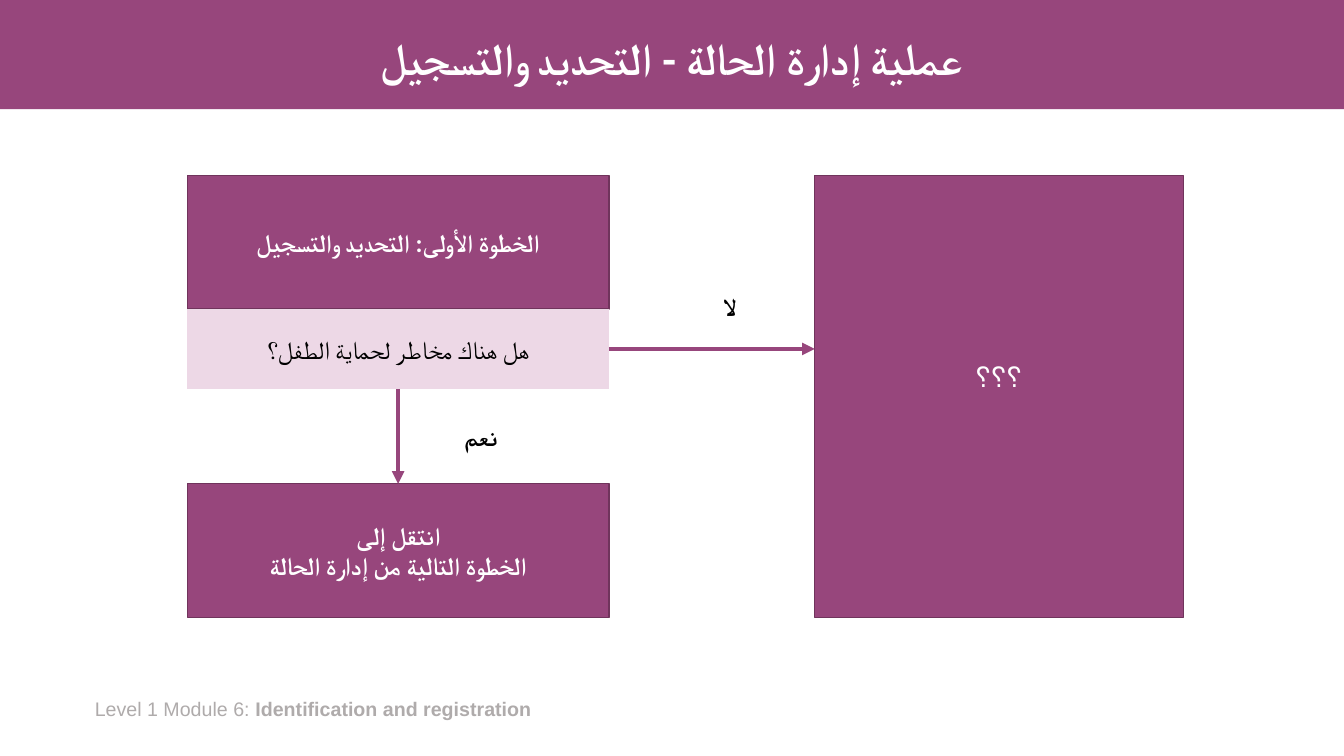
import pptx
import pptx.util
import pptx.dml.color
import pptx.enum.shapes
import pptx.enum.text
import pptx.oxml.ns
import lxml.etree
from dataclasses import dataclass

COLUMNS, ROWS = 160, 90
SHAPE = pptx.enum.shapes.MSO_SHAPE
ALIGN = pptx.enum.text.PP_ALIGN
ANCHOR = pptx.enum.text.MSO_ANCHOR


@dataclass(frozen=True)
class Theme:
    plum: str = "97467C"
    edge: str = "70345C"
    blush: str = "EDD8E6"
    white: str = "FFFFFF"
    black: str = "000000"
    grey: str = "AFABAB"
    heading: str = "Calibri"
    body: str = "Arial"
    title_size: int = 32
    large_size: int = 20
    text_size: int = 18
    footer_size: int = 14


THEME = Theme()
SLIDE_WIDTH = pptx.util.Emu(12192000)
SLIDE_HEIGHT = pptx.util.Inches(7.5)


def across(columns):
    return int(SLIDE_WIDTH * columns / COLUMNS)


def down(rows):
    return int(SLIDE_HEIGHT * rows / ROWS)


def area(left, top, width, height):
    return across(left), down(top), across(width), down(height)


def color(value):
    return pptx.dml.color.RGBColor.from_string(value)


def add_span(para, text, size, font, tint, bold=False):
    span = para.add_run()
    span.text = text
    span.font.size = pptx.util.Pt(size)
    span.font.name = font
    span.font.bold = bold
    span.font.color.rgb = color(tint)
    complex_script = lxml.etree.SubElement(
        span.font._element, pptx.oxml.ns.qn("a:cs"))
    complex_script.set("typeface", font)


def start_arabic(frame, align):
    para = frame.paragraphs[0]
    para.alignment = align
    para._p.get_or_add_pPr().set("rtl", "1")
    return para


def add_box(page, place, fill, edge=None, shape=SHAPE.FLOWCHART_PROCESS):
    box = page.shapes.add_shape(shape, *place)
    box.shadow.inherit = False
    box.fill.solid()
    box.fill.fore_color.rgb = color(fill)
    if edge:
        box.line.color.rgb = color(edge)
        box.line.width = pptx.util.Pt(1)
    else:
        box.line.fill.background()
    return box


def add_step(page, place, lines, fill=THEME.plum, edge=THEME.edge, tint=THEME.white,
             size=THEME.text_size, font=THEME.heading, bold=True):
    box = add_box(page, place, fill, edge)
    frame = box.text_frame
    frame.word_wrap = True
    frame.vertical_anchor = ANCHOR.MIDDLE
    para = start_arabic(frame, ALIGN.CENTER)
    for index, line in enumerate(lines):
        if index:
            para.add_line_break()
        add_span(para, line, size, font, tint, bold)
    return box


def add_text_frame(page, place):
    frame = page.shapes.add_textbox(*place).text_frame
    frame.word_wrap = True
    frame.auto_size = pptx.enum.text.MSO_AUTO_SIZE.SHAPE_TO_FIT_TEXT
    return frame


def add_label(page, place, text):
    para = start_arabic(add_text_frame(page, place), ALIGN.RIGHT)
    add_span(para, text, THEME.text_size, THEME.body, THEME.black, True)


def add_arrow(page, source, side, end):
    arrow = page.shapes.add_connector(
        pptx.enum.shapes.MSO_CONNECTOR.STRAIGHT, 0, 0, *end)
    arrow.begin_connect(source, side)
    arrow.line.color.rgb = color(THEME.plum)
    arrow.line.width = pptx.util.Pt(3)
    head = lxml.etree.SubElement(
        arrow.line._get_or_add_ln(), pptx.oxml.ns.qn("a:tailEnd"))
    head.set("type", "triangle")
    lxml.etree.SubElement(arrow._element.spPr, pptx.oxml.ns.qn("a:effectLst"))
    return arrow


def add_heading(page, text):
    band = add_box(page, area(0, 0, COLUMNS, 13), THEME.plum, shape=SHAPE.RECTANGLE)
    title = page.shapes.title
    title._element.addprevious(band._element)
    title.left, title.top, title.width, title.height = area(11, 1.5, 138, 11.4)
    title.text_frame.vertical_anchor = ANCHOR.MIDDLE
    para = start_arabic(title.text_frame, ALIGN.CENTER)
    para.line_spacing = 0.9
    add_span(para, text, THEME.title_size, THEME.heading, THEME.white, True)


def add_footer(page):
    para = add_text_frame(page, area(10.1, 82.4, 54.6, 4.1)).paragraphs[0]
    for text, bold in (("Level 1 Module 6: ", False),
                       ("Identification and registration", True)):
        add_span(para, text, THEME.footer_size, THEME.body, THEME.grey, bold)


def add_flow(page):
    left, width, top, bottom = 22.3, 50.2, 20.9, 73.5
    step_height, question_height = 15.9, 9.5
    answer_left, answer_width = 97, 43.9
    question_top = top + step_height

    add_step(page, area(left, top, width, step_height),
             ["الخطوة الأولى: التحديد والتسجيل"])
    question = add_step(page, area(left, question_top, width, question_height),
                        ["هل هناك مخاطر لحماية الطفل؟"],
                        THEME.blush, None, THEME.black, bold=False)
    following = add_step(page, area(left, bottom - step_height, width, step_height),
                         ["انتقل إلى", "الخطوة التالية من إدارة الحالة"])
    answer = add_step(page, area(answer_left, top, answer_width, bottom - top),
                      ["؟؟؟"], size=THEME.large_size, font=THEME.body)
    answer.text_frame.margin_bottom = down(5.4)

    yes_arrow = add_arrow(page, question, 2, (following.left, following.top))
    yes_arrow.end_connect(following, 0)
    add_arrow(page, question, 3, (answer.left, question.top + question.height // 2))
    add_label(page, area(80.8, 34.1, 8, 4.8), "لا")
    add_label(page, area(50.2, 49.6, 10.2, 4.8), "نعم")


def main():
    deck = pptx.Presentation()
    deck.slide_width, deck.slide_height = SLIDE_WIDTH, SLIDE_HEIGHT
    page = deck.slides.add_slide(deck.slide_layouts.get_by_name("Title Only"))
    add_heading(page, "عملية إدارة الحالة - التحديد والتسجيل")
    add_footer(page)
    add_flow(page)
    deck.save("out.pptx")


if __name__ == "__main__":
    main()
